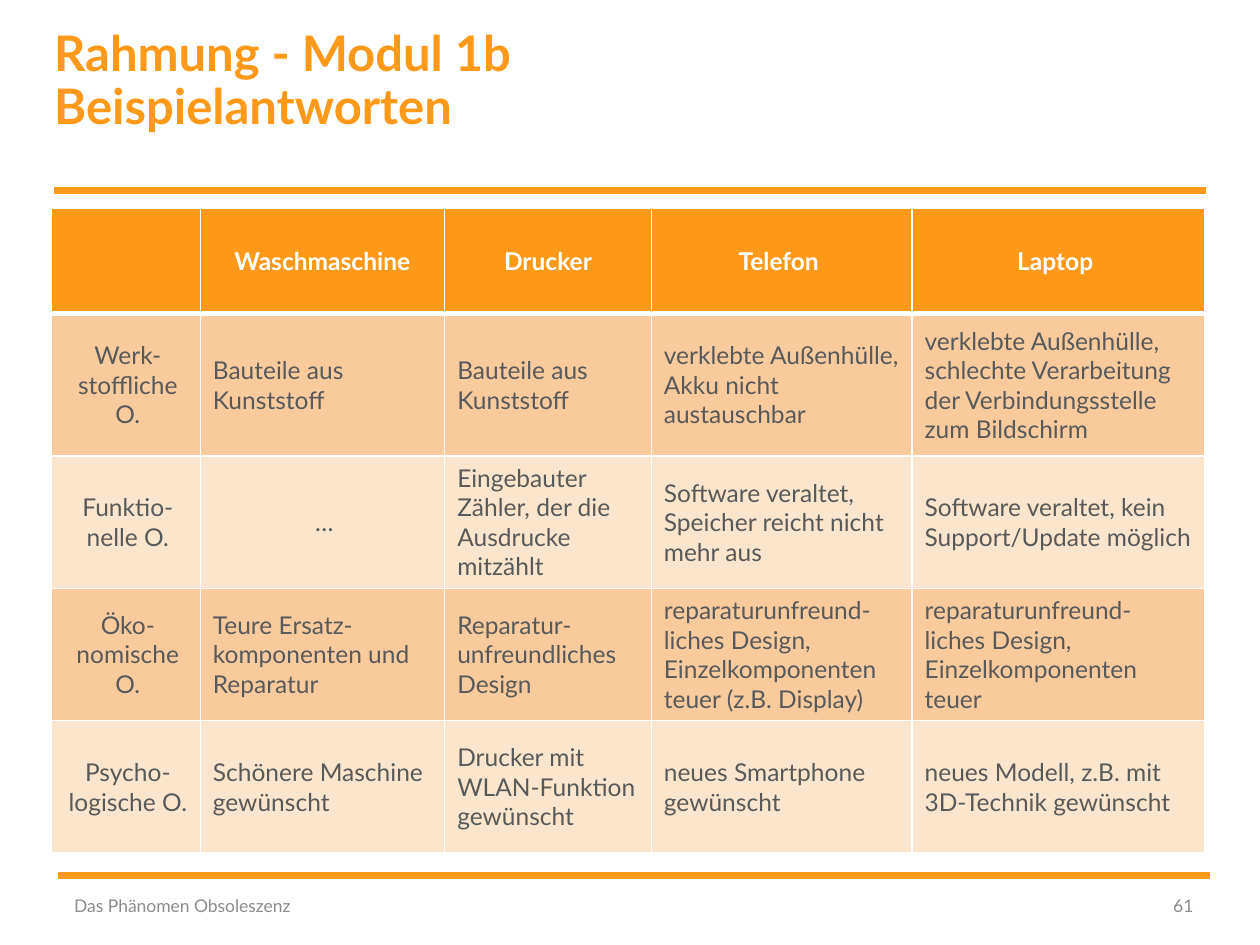
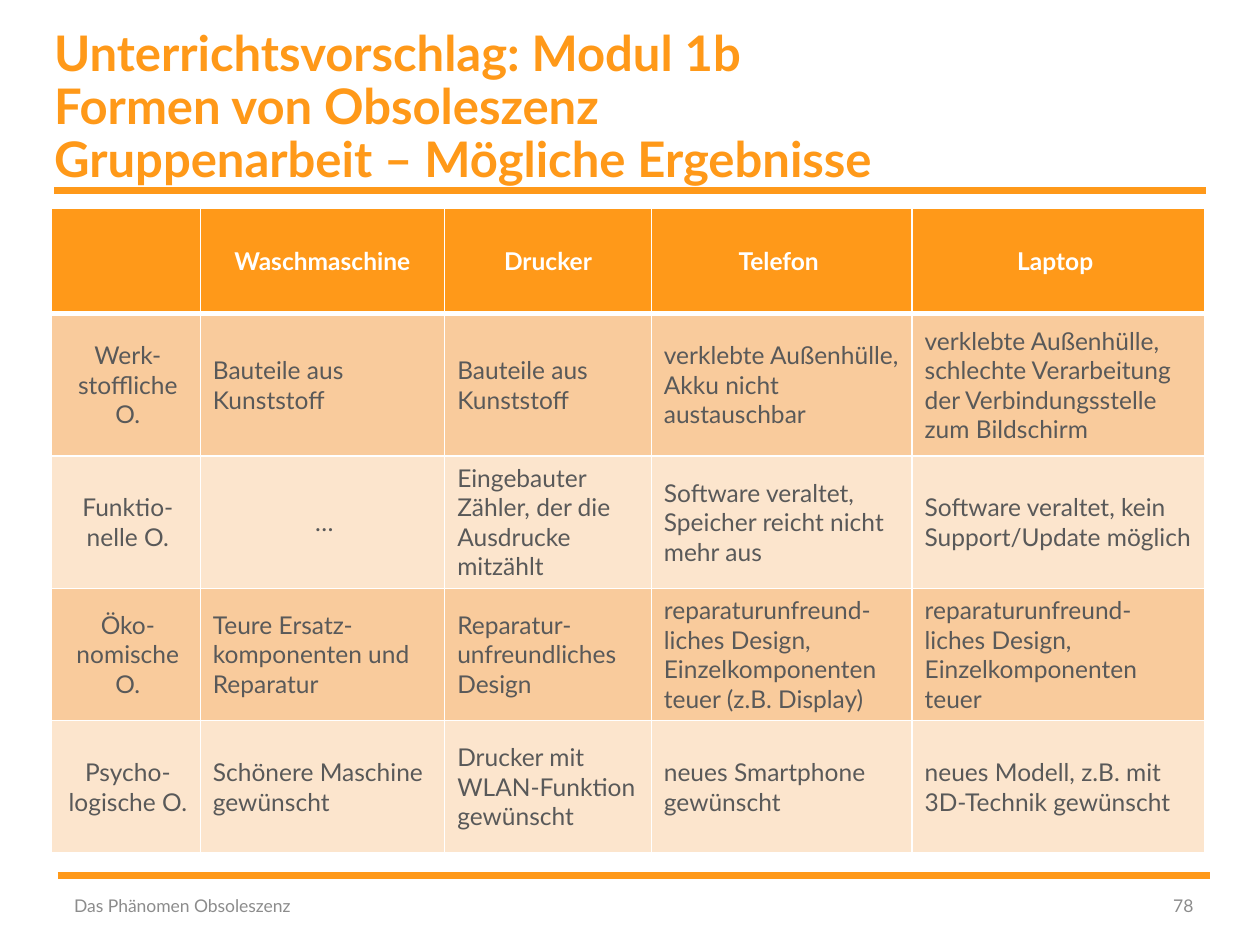
from dataclasses import dataclass

from lxml import etree
from pptx import Presentation
from pptx.dml.color import RGBColor
from pptx.enum import shapes, text
from pptx.oxml import ns
from pptx.util import Inches, Pt


@dataclass(frozen=True)
class Theme:
    font: str = "Lato"
    accent: str = "FF9919"
    band_dark: str = "F9CB9C"
    band_light: str = "FCE5CD"
    white: str = "FFFFFF"
    body: str = "595959"
    muted: str = "8C8C8C"
    title_size: int = 28
    table_size: int = 14
    footer_size: int = 10
    rule_width: int = 4
    border_width: int = 1
    header_border_width: int = 3


THEME = Theme()
TITLE_ONLY = 5
FOOTER = "Das Phänomen Obsoleszenz"

# Boxes: left, top, width, height in inches
TITLE_BOX = (0.43, 0.23, 7.25, 1.17)
TABLE_BOX = (0.41, 1.65, 9.15, 5.12)
FOOTER_BOX = (0.49, 6.99, 3.38, 0.4)
NUMBER_BOX = (8.97, 6.99, 0.6, 0.4)
RULE_STARTS = [(0.43, 1.51), (0.46, 6.95)]
RULE_LENGTH = 9.14

COLUMN_WIDTHS = [1.18, 1.94, 1.64, 2.07, 2.32]
ROW_HEIGHTS = [0.84, 1.13, 1.05, 1.05, 1.05]

# Each row: form of obsolescence, then one answer per device
OBSOLESCENCE_TABLE = [
    ["", "Waschmaschine", "Drucker", "Telefon ", "Laptop "],
    ["Werk-stoffliche O.",
     "Bauteile aus Kunststoff",
     "Bauteile aus Kunststoff",
     "verklebte Außenhülle, Akku nicht austauschbar",
     "verklebte Außenhülle, schlechte Verarbeitung der Verbindungsstelle zum Bildschirm"],
    ["Funktio-nelle O.",
     "…",
     "Eingebauter Zähler, der die Ausdrucke mitzählt",
     "Software veraltet, Speicher reicht nicht mehr aus",
     "Software veraltet, kein Support/Update möglich"],
    ["Öko-nomische O.",
     "Teure Ersatz-komponenten und Reparatur",
     "Reparatur-unfreundliches Design",
     "reparaturunfreund-liches Design, Einzelkomponenten teuer (z.B. Display)",
     "reparaturunfreund-\nliches Design, Einzelkomponenten teuer"],
    ["Psycho-logische O.",
     "Schönere Maschine gewünscht",
     "Drucker mit WLAN-Funktion gewünscht",
     "neues Smartphone gewünscht",
     "neues Modell, z.B. mit 3D-Technik gewünscht"],
]

# Title lines and page number of each slide
PAGES = [
    (["Rahmung - Modul 1b", "Beispielantworten"], 61),
    (["Unterrichtsvorschlag: Modul 1b", "Formen von Obsoleszenz ",
      "Gruppenarbeit – Mögliche Ergebnisse"], 78),
]


def format_paragraph(para, size, color, bold=False, align=text.PP_ALIGN.LEFT):
    para.alignment = align
    for span in para.runs:
        span.font.name = THEME.font
        span.font.size = Pt(size)
        span.font.bold = bold
        span.font.color.rgb = RGBColor.from_string(color)


def add_title(page, box, lines):
    title = page.shapes.title
    title.left, title.top, title.width, title.height = map(Inches, box)
    frame = title.text_frame
    frame.text = "\v".join(lines)
    frame.word_wrap = True
    frame.auto_size = text.MSO_AUTO_SIZE.NONE
    frame.vertical_anchor = text.MSO_ANCHOR.TOP
    frame.margin_left = frame.margin_top = frame.margin_right = frame.margin_bottom = 0
    para = frame.paragraphs[0]
    para.line_spacing = 0.9
    para.space_before = Pt(0)
    format_paragraph(para, THEME.title_size, THEME.accent, bold=True)


def add_rule(page, left, top):
    rule = page.shapes.add_connector(
        shapes.MSO_CONNECTOR.STRAIGHT,
        Inches(left), Inches(top), Inches(left + RULE_LENGTH), Inches(top))
    rule.line.color.rgb = RGBColor.from_string(THEME.accent)
    rule.line.width = Pt(THEME.rule_width)
    etree.SubElement(rule._element.spPr, ns.qn("a:effectLst"))


def add_small_text(page, box, words, align):
    label = page.shapes.add_textbox(*map(Inches, box))
    frame = label.text_frame
    frame.text = words
    frame.word_wrap = True
    frame.vertical_anchor = text.MSO_ANCHOR.MIDDLE
    format_paragraph(frame.paragraphs[0], THEME.footer_size, THEME.muted, align=align)


def set_borders(cell, row):
    """Draw white cell borders, heavier between the header and the body."""
    properties = cell._tc.get_or_add_tcPr()
    heavy_side = {0: "lnB", 1: "lnT"}.get(row)
    for position, side in enumerate(["lnL", "lnR", "lnT", "lnB"]):
        width = THEME.header_border_width if side == heavy_side else THEME.border_width
        border = etree.Element(ns.qn(f"a:{side}"), w=str(Pt(width)))
        fill = etree.SubElement(border, ns.qn("a:solidFill"))
        etree.SubElement(fill, ns.qn("a:srgbClr"), val=THEME.white)
        properties.insert(position, border)


def fill_cell(cell, words, row, column):
    header = row == 0
    band = THEME.band_dark if row % 2 else THEME.band_light
    centred = header or column == 0 or words == "…"

    cell.fill.solid()
    cell.fill.fore_color.rgb = RGBColor.from_string(THEME.accent if header else band)
    set_borders(cell, row)
    cell.vertical_anchor = text.MSO_ANCHOR.MIDDLE
    cell.margin_left = cell.margin_right = Inches(0.07)
    cell.margin_top = cell.margin_bottom = 0
    cell.text_frame.text = words
    for para in cell.text_frame.paragraphs:
        if not header:
            para._p.get_or_add_pPr().set("marL", str(Inches(0.03)))
        format_paragraph(
            para, THEME.table_size, THEME.white if header else THEME.body, bold=header,
            align=text.PP_ALIGN.CENTER if centred else text.PP_ALIGN.LEFT)


def add_obsolescence_table(page, box):
    table = page.shapes.add_table(
        len(ROW_HEIGHTS), len(COLUMN_WIDTHS), *map(Inches, box)).table
    table.horz_banding = False
    for column, width in zip(table.columns, COLUMN_WIDTHS):
        column.width = Inches(width)
    for row, height in zip(table.rows, ROW_HEIGHTS):
        row.height = Inches(height)
    for row, answers in enumerate(OBSOLESCENCE_TABLE):
        for column, words in enumerate(answers):
            fill_cell(table.cell(row, column), words, row, column)


def add_table_page(deck, title_lines, number):
    page = deck.slides.add_slide(deck.slide_layouts[TITLE_ONLY])
    # Frame: rules and title
    for start in RULE_STARTS:
        add_rule(page, *start)
    add_title(page, TITLE_BOX, title_lines)
    # Content
    add_obsolescence_table(page, TABLE_BOX)
    # Footer
    add_small_text(page, NUMBER_BOX, str(number), text.PP_ALIGN.RIGHT)
    add_small_text(page, FOOTER_BOX, FOOTER, text.PP_ALIGN.LEFT)


def main():
    deck = Presentation()
    deck.slide_width, deck.slide_height = Inches(10), Inches(7.5)
    for title_lines, number in PAGES:
        add_table_page(deck, title_lines, number)
    deck.save("out.pptx")


if __name__ == "__main__":
    main()
